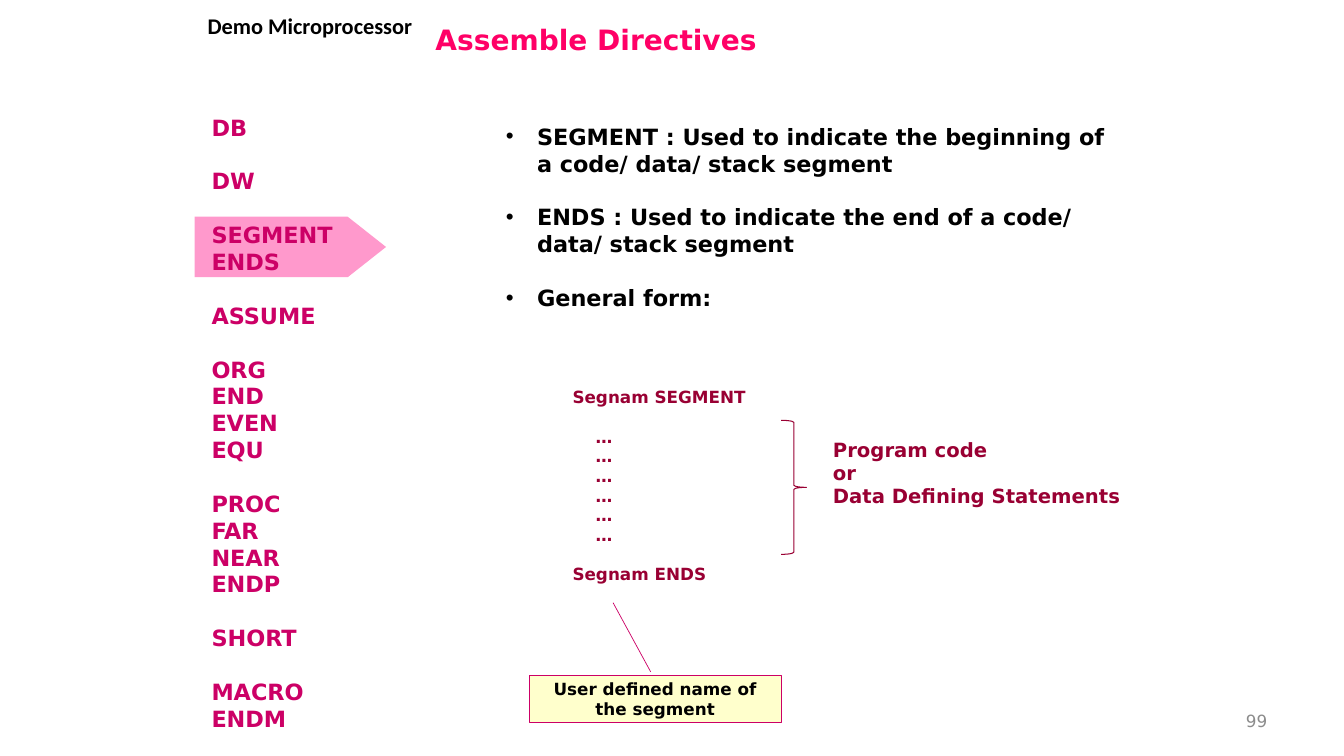
from lxml import etree
from pptx import Presentation, util as u
from pptx.dml.color import RGBColor
from pptx.enum import shapes, text
from pptx.oxml.ns import qn

COLUMNS, ROWS = 40, 30
COLUMN, ROW = u.Inches(13.333) / COLUMNS, u.Inches(7.5) / ROWS
SANS, COURSE_FONT = "DejaVu Sans", "Calibri"
LINE_HEIGHT = 1.2

BLACK = RGBColor(0, 0, 0)
WHITE = RGBColor(0xFF, 0xFF, 0xFF)
GREY = RGBColor(0x8C, 0x8C, 0x8C)
ROSE = RGBColor(0xFF, 0x00, 0x66)
PINK = RGBColor(0xFF, 0x99, 0xCC)
MAGENTA = RGBColor(0xCC, 0x00, 0x66)
MAROON = RGBColor(0x99, 0x00, 0x33)
CREAM = RGBColor(0xFF, 0xFF, 0xCC)

HEADING = "Assemble Directives"
COURSE = "Demo Microprocessor"
PAGE = "99"
DIRECTIVES = [
    ["DB"], ["DW"], ["SEGMENT", "ENDS"], ["ASSUME"],
    ["ORG", "END", "EVEN", "EQU"],
    ["PROC", "FAR", "NEAR", "ENDP"],
    ["SHORT"], ["MACRO", "ENDM"],
]
MEANINGS = [
    ["SEGMENT : Used to indicate the beginning of a code/ data/ stack segment"],
    ["ENDS : Used to indicate the end of a code/ data/ stack segment"],
    ["General form:"],
]
GENERAL_FORM = [["Segnam SEGMENT"], ["…"] * 6, ["Segnam ENDS"]]
CONTENTS = [["Program code", "or", "Data Defining Statements"]]
NAME_NOTE = "User defined name of the segment"
NOTE_POINTER = (-0.077, 0.482, -1.533, 0.333)
FORM_COLUMNS = (7.75, 9.25)

AREAS = {
    "heading": (12.66, 0.48, 26.34, 2.12),
    "page": (28.68, 27.8, 9.33, 1.6),
    "course": (5.22, 0.28, 8.01, 1.48),
    "meanings": (14.76, 4.68, 18.51, 7.96),
    "form": (16.74, 15.2, sum(FORM_COLUMNS), 8.4),
    "note": (15.75, 26.8, 7.5, 1.88),
    "brace": (23.25, 16.68, 0.75, 5.32),
    "directives": (6, 4.32, 4.9, 25.16),
    "marker": (5.79, 8.6, 5.7, 2.4),
}


def area(part):
    left, top, width, height = AREAS[part]
    return [round(n) for n in (left * COLUMN, top * ROW, width * COLUMN, height * ROW)]


def write(frame, groups, size, color, gap=0, font=SANS, bold=True,
          align=text.PP_ALIGN.LEFT):
    lines = [(line, g > 0 and i == 0)
             for g, group in enumerate(groups) for i, line in enumerate(group)]
    frame.text = "\n".join(line for line, _ in lines)
    frame.word_wrap = True
    for paragraph, (_, starts_group) in zip(frame.paragraphs, lines):
        paragraph.alignment = align
        paragraph.space_before = u.Pt(gap if starts_group else 0)
        for run in paragraph.runs:
            run.font.name, run.font.size = font, u.Pt(size)
            run.font.bold, run.font.color.rgb = bold, color


def add_text(part, groups, size, color, **look):
    frame = slide.shapes.add_textbox(*area(part)).text_frame
    write(frame, groups, size, color, **look)
    return frame


def add_figure(kind, box, fill=None, line=None, weight=0):
    figure = slide.shapes.add_shape(kind, *box)
    figure.shadow.inherit = False
    if fill is None:
        figure.fill.background()
    else:
        figure.fill.solid()
        figure.fill.fore_color.rgb = fill
    if line is None:
        figure.line.fill.background()
    else:
        figure.line.color.rgb, figure.line.width = line, u.Pt(weight)
    return figure


def indent(paragraph, margin, first=0, bullet=None):
    properties = paragraph._p.get_or_add_pPr()
    properties.set("marL", str(u.Inches(margin)))
    properties.set("indent", str(u.Inches(first)))
    if bullet:
        etree.SubElement(properties, qn("a:buFont")).set("typeface", "Arial")
        etree.SubElement(properties, qn("a:buChar")).set("char", bullet)


deck = Presentation()
deck.slide_width, deck.slide_height = u.Inches(13.333), u.Inches(7.5)
slide = deck.slides.add_slide(deck.slide_layouts[5])

left, top, width, height = area("marker")
upright = (left + (width - height) // 2, top - (width - height) // 2, height, width)
marker = add_figure(shapes.MSO_SHAPE.FLOWCHART_OFFPAGE_CONNECTOR, upright, PINK)
marker.rotation = 270

heading = slide.shapes.title
heading.left, heading.top, heading.width, heading.height = area("heading")
write(heading.text_frame, [[HEADING]], 20, ROSE)
heading.text_frame.auto_size = text.MSO_AUTO_SIZE.NONE
heading.text_frame.vertical_anchor = text.MSO_ANCHOR.MIDDLE

page = add_text("page", [[PAGE]], 12, GREY, bold=False, align=text.PP_ALIGN.RIGHT)
page.vertical_anchor = text.MSO_ANCHOR.MIDDLE
add_text("course", [[COURSE]], 16, BLACK, font=COURSE_FONT, align=text.PP_ALIGN.CENTER)

meanings = add_text("meanings", MEANINGS, 16, BLACK, gap=16 * LINE_HEIGHT)
for paragraph in meanings.paragraphs:
    indent(paragraph, 0.31, -0.31, "•")

form = slide.shapes.add_table(1, 2, *area("form")).table
for column, share in zip(form.columns, FORM_COLUMNS):
    column.width = round(share * COLUMN)
general, contents = form.rows[0].cells
for cell in (general, contents):
    cell.fill.solid()
    cell.fill.fore_color.rgb = WHITE
write(general.text_frame, GENERAL_FORM, 12, MAROON, gap=14)
for paragraph in general.text_frame.paragraphs:
    if paragraph.text == "…":
        indent(paragraph, 0.23)
write(contents.text_frame, CONTENTS, 14, MAROON)
contents.margin_top = u.Inches(0.56)

note = add_figure(shapes.MSO_SHAPE.LINE_CALLOUT_1, area("note"), CREAM, MAGENTA, 0.5)
for i, share in enumerate(NOTE_POINTER):
    note.adjustments[i] = share
write(note.text_frame, [[NAME_NOTE]], 12, BLACK, align=text.PP_ALIGN.CENTER)
note.text_frame.vertical_anchor = text.MSO_ANCHOR.MIDDLE

add_figure(shapes.MSO_SHAPE.RIGHT_BRACE, area("brace"), line=MAROON, weight=0.75)
add_text("directives", DIRECTIVES, 16, MAGENTA, gap=16 * LINE_HEIGHT)

deck.save("out.pptx")
